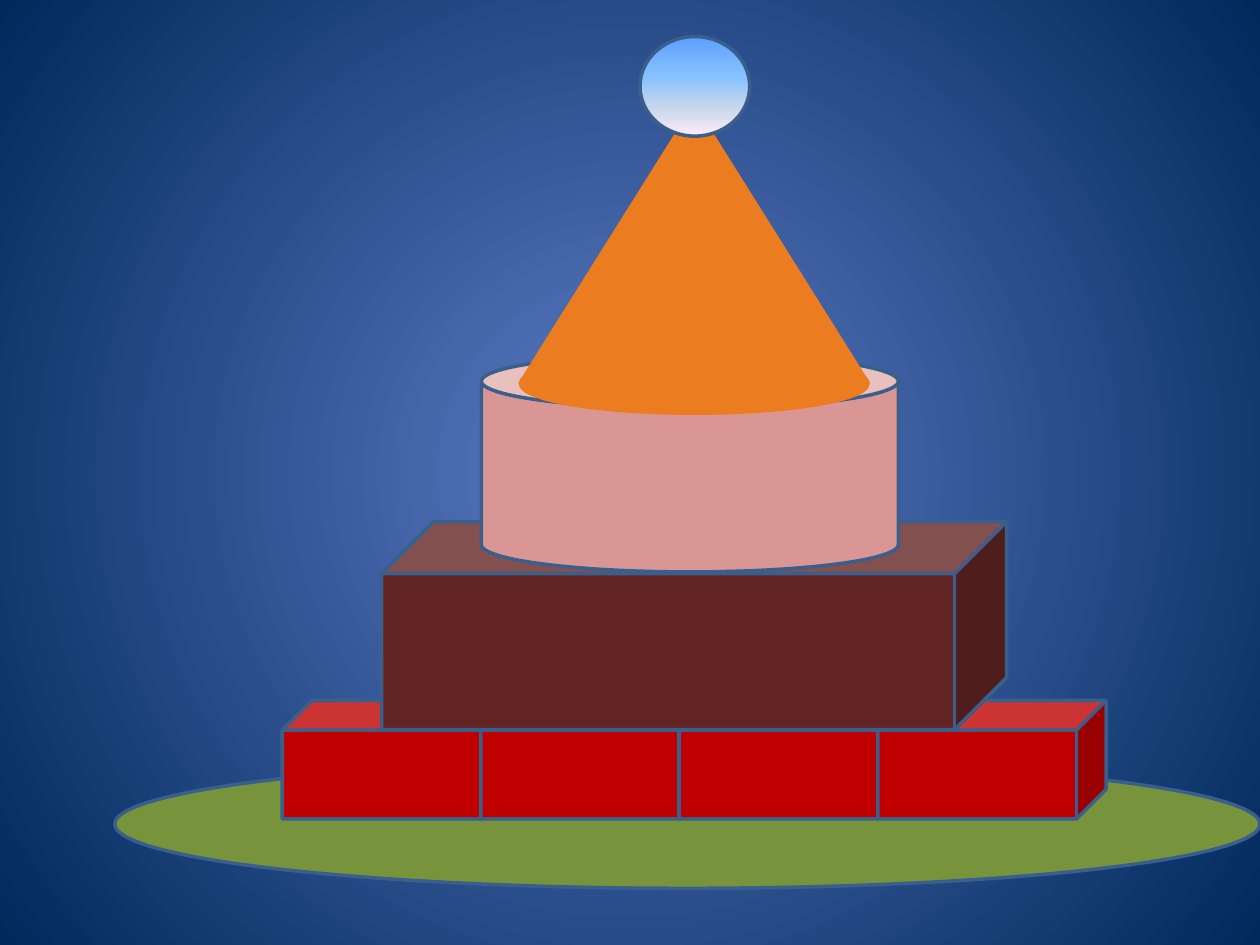
"""Build a slide with a tower of stacked solids on a green base."""
from lxml import etree
from pptx import Presentation
from pptx.dml.color import RGBColor
from pptx.enum.shapes import MSO_SHAPE
from pptx.oxml.ns import qn
from pptx.util import Inches, Pt

OVAL, CUBE = MSO_SHAPE.OVAL, MSO_SHAPE.CUBE
CAN, TRIANGLE = MSO_SHAPE.CAN, MSO_SHAPE.ISOSCELES_TRIANGLE

EDGE, ORANGE = "3A5F8C", "EC7C20"
BACKDROP = [(0, "5E7CC5"), (100, "00295C")]
SKY = [(0, "5E9EFF"), (40, "85C2FF"), (70, "C4D6EB"), (100, "FFEBFA")]

GROUND = (OVAL, (0.91, 6.03, 9.09, 1.02), "77933C")
BRICKS = [(CUBE, (2.24 + i * 1.576, 5.56, 1.81, 0.94), "C00000") for i in range(4)]
BLOCK = (CUBE, (3.03, 4.14, 4.96, 1.65), "632523")
DRUM = (CAN, (3.82, 2.81, 3.31, 1.73), "D99694")
CONE = [
    (OVAL, (4.13, 2.81, 2.76, 0.47), ORANGE),
    (TRIANGLE, (4.13, 0.84, 2.76, 2.2), ORANGE),
]
BALL = (OVAL, (5.08, 0.29, 0.87, 0.79), "85C2FF")


def rgb(value):
    return RGBColor.from_string(value)


def add_solid(shapes, kind, box, color, edge=EDGE):
    s = shapes.add_shape(kind, *(Inches(v) for v in box))
    s.shadow.inherit = False
    s.fill.solid()
    s.fill.fore_color.rgb = rgb(color)
    s.line.color.rgb = rgb(edge)
    s.line.width = Pt(2)
    return s


def set_gradient(fill, element, stops, radial=False):
    fill.gradient()
    grad = next(element.iter(qn("a:gradFill")))
    for child in list(grad):
        grad.remove(child)
    gs_list = etree.SubElement(grad, qn("a:gsLst"))
    for pos, color in stops:
        gs = etree.SubElement(gs_list, qn("a:gs"), pos=str(pos * 1000))
        etree.SubElement(gs, qn("a:srgbClr"), val=color)
    if radial:
        circle = etree.SubElement(grad, qn("a:path"), path="circle")
        etree.SubElement(circle, qn("a:fillToRect"), {side: "50000" for side in "ltrb"})
    else:
        etree.SubElement(grad, qn("a:lin"), ang="5400000", scaled="0")


def main():
    prs = Presentation()
    prs.slide_width, prs.slide_height = Inches(10), Inches(7.5)
    slide = prs.slides.add_slide(prs.slide_layouts[6])
    set_gradient(slide.background.fill, slide.element, BACKDROP, radial=True)

    for solid in [GROUND, *BRICKS, BLOCK, DRUM]:
        add_solid(slide.shapes, *solid)
    cone = slide.shapes.add_group_shape()
    for solid in CONE:
        add_solid(cone.shapes, *solid, edge=ORANGE)
    ball = add_solid(slide.shapes, *BALL)
    set_gradient(ball.fill, ball.element, SKY)

    prs.save("out.pptx")


if __name__ == "__main__":
    main()
